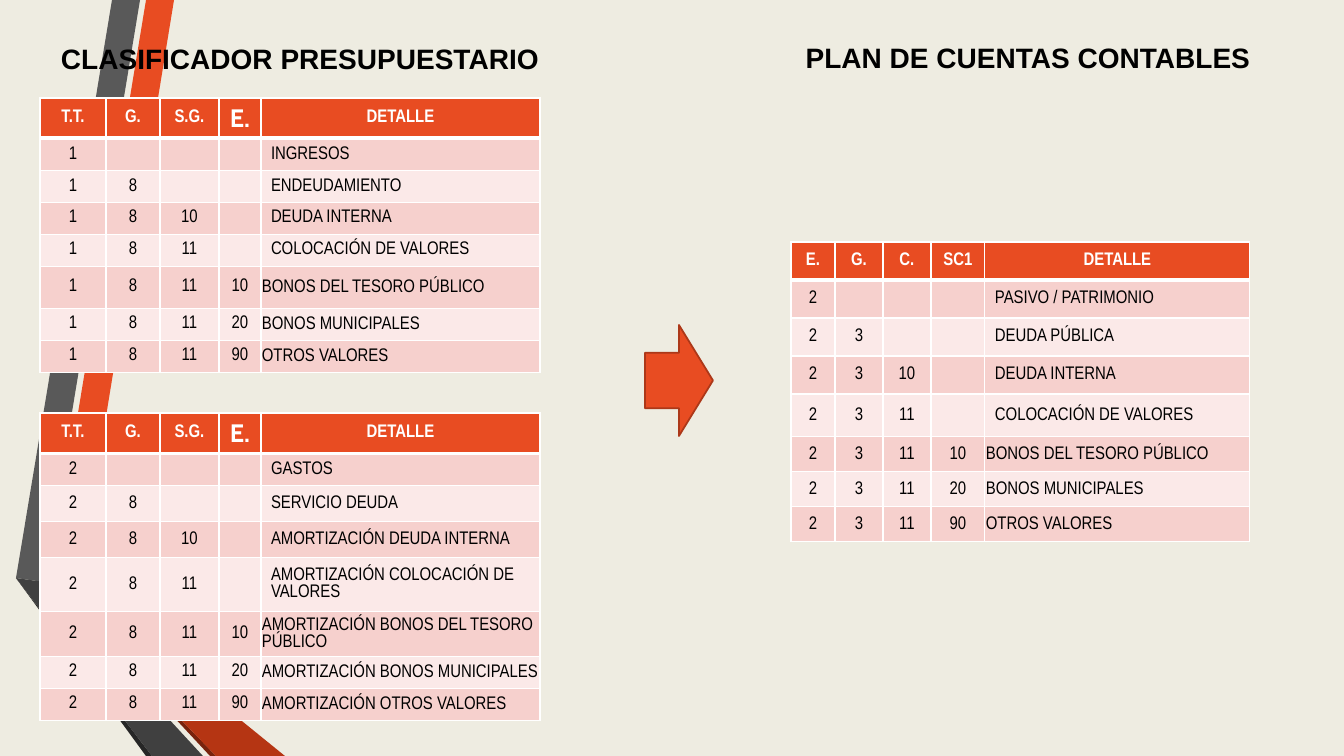
import pptx
import pptx.util
import pptx.dml.color
import pptx.enum.shapes
import pptx.enum.text
import pptx.oxml.ns
import lxml.etree

EMU_PER_PX = 914400 / 100.8
COLORS = {
    "background": "EEECE1", "orange": "E84C22", "outline": "AC3819",
    "gray": "595959", "charcoal": "404040", "soot": "262626",
    "rust": "B53513", "maroon": "78230D",
    "odd row": "F6D0CD", "even row": "FBE9E8",
    "white": "FFFFFF", "black": "000000",
}
CENTER = pptx.enum.text.PP_ALIGN.CENTER
LEFT = pptx.enum.text.PP_ALIGN.LEFT

# Decorative ribbon: color and corner points in px
RIBBON = [
    ("orange", [(50, 583), (78, 588), (174, 0), (146, 0)]),
    ("gray", [(140, 0), (112, 0), (16, 578), (44, 582)]),
    ("soot", [(16, 578), (146, 756), (152, 756)]),
    ("maroon", [(50, 584), (210, 756), (216, 756)]),
    ("rust", [(50, 584), (216, 756), (285, 756), (78, 588), (50, 583)]),
    ("charcoal", [(203, 756), (48, 588), (43, 583), (44, 582), (16, 578), (152, 756)]),
]

# Each row: account codes, then the detail
INCOME_ROWS = [
    ("T.T. G. S.G. E.", "DETALLE"),
    ("1", "INGRESOS"),
    ("1 8", "ENDEUDAMIENTO"),
    ("1 8 10", "DEUDA INTERNA"),
    ("1 8 11", "COLOCACIÓN DE VALORES"),
    ("1 8 11 10", "BONOS DEL TESORO PÚBLICO"),
    ("1 8 11 20", "BONOS MUNICIPALES"),
    ("1 8 11 90", "OTROS VALORES"),
]
EXPENSE_ROWS = [
    ("T.T. G. S.G. E.", "DETALLE"),
    ("2", "GASTOS"),
    ("2 8", "SERVICIO DEUDA"),
    ("2 8 10", "AMORTIZACIÓN DEUDA INTERNA"),
    ("2 8 11", "AMORTIZACIÓN COLOCACIÓN DE VALORES"),
    ("2 8 11 10", "AMORTIZACIÓN BONOS DEL TESORO PÚBLICO"),
    ("2 8 11 20", "AMORTIZACIÓN BONOS MUNICIPALES"),
    ("2 8 11 90", "AMORTIZACIÓN OTROS VALORES"),
]
ACCOUNT_ROWS = [
    ("E. G. C. SC1", "DETALLE"),
    ("2", "PASIVO / PATRIMONIO"),
    ("2 3", "DEUDA PÚBLICA"),
    ("2 3 10", "DEUDA INTERNA"),
    ("2 3 11", "COLOCACIÓN DE VALORES"),
    ("2 3 11 10", "BONOS DEL TESORO PÚBLICO"),
    ("2 3 11 20", "BONOS MUNICIPALES"),
    ("2 3 11 90", "OTROS VALORES"),
]


def px(length):
    return pptx.util.Emu(round(length * EMU_PER_PX))


def rgb(name):
    return pptx.dml.color.RGBColor.from_string(COLORS[name])


def paint(fill, color):
    fill.solid()
    fill.fore_color.rgb = rgb(color)


def add_run(paragraph, text, font_name, size, color, bold, alignment):
    paragraph.alignment = alignment
    run = paragraph.add_run()
    run.text = text
    run.font.name = font_name
    run.font.size = pptx.util.Pt(size)
    run.font.bold = bold
    run.font.color.rgb = rgb(color)


def add_ribbon(slide):
    group = slide.shapes.add_group_shape()
    for color, points in RIBBON:
        builder = group.shapes.build_freeform(*points[0], scale=EMU_PER_PX)
        builder.add_line_segments(points[1:], close=True)
        shape = builder.convert_to_shape()
        shape.shadow.inherit = False
        paint(shape.fill, color)
        shape.line.fill.background()


def write_heading(shape, left, width, text):
    shape.left, shape.top, shape.width, shape.height = px(left), px(36), px(width), px(44)
    frame = shape.text_frame
    frame.word_wrap = True
    frame.auto_size = pptx.enum.text.MSO_AUTO_SIZE.SHAPE_TO_FIT_TEXT
    frame.vertical_anchor = pptx.enum.text.MSO_ANCHOR.TOP
    add_run(frame.paragraphs[0], text, "Arial", 20, "black", True, CENTER)


def add_borders(cell, top, bottom):
    properties = cell._tc.get_or_add_tcPr()
    for side, points in (("L", 1), ("R", 1), ("T", top), ("B", bottom)):
        line = lxml.etree.SubElement(properties, pptx.oxml.ns.qn(f"a:ln{side}"),
                                     w=str(pptx.util.Pt(points)))
        fill = lxml.etree.SubElement(line, pptx.oxml.ns.qn("a:solidFill"))
        lxml.etree.SubElement(fill, pptx.oxml.ns.qn("a:srgbClr"), val=COLORS["white"])


def fill_cell(cell, text, row, is_detail, has_full_code):
    is_header = row == 0
    add_borders(cell, 3 if row == 1 else 1, 3 if is_header else 1)
    paint(cell.fill, "orange" if is_header else "odd row" if row % 2 else "even row")
    cell.vertical_anchor = pptx.enum.text.MSO_ANCHOR.MIDDLE
    paragraph = cell.text_frame.paragraphs[0]
    if not text:
        # Keeps the empty cell from stretching its row
        lxml.etree.SubElement(paragraph._p, pptx.oxml.ns.qn("a:endParaRPr"), sz="1300")
        return
    if is_detail and has_full_code and not is_header:
        cell.margin_left = cell.margin_right = cell.margin_top = px(1)
        cell.margin_bottom = 0
    is_large = is_header and text == "E." and row == 0 and cell.is_large_code \
        if hasattr(cell, "is_large_code") else False
    add_run(paragraph, text, "Cabin" if is_large else "Arial Narrow", 18 if is_large else 13,
            "white" if is_header else "black", is_header,
            LEFT if is_detail and not is_header else CENTER)


def add_code_table(slide, left, top, widths, heights, rows):
    frame = slide.shapes.add_table(len(rows), len(widths), px(left), px(top),
                                   px(sum(widths)), px(sum(heights)))
    table = frame.table
    for column, width in zip(table.columns, widths):
        column.width = px(width)
    for table_row, height in zip(table.rows, heights):
        table_row.height = px(height)
    last = len(widths) - 1
    for row, (code, detail) in enumerate(rows):
        codes = code.split()
        texts = codes + [""] * (last - len(codes)) + [detail]
        for column, text in enumerate(texts):
            fill_cell(table.cell(row, column), text, row, column == last, len(codes) == last)
    return table


def enlarge_element_header(table):
    font = table.cell(0, 3).text_frame.paragraphs[0].runs[0].font
    font.name = "Cabin"
    font.size = pptx.util.Pt(18)


def add_arrow(slide):
    arrow = slide.shapes.add_shape(pptx.enum.shapes.MSO_SHAPE.RIGHT_ARROW,
                                   px(645), px(325), px(68), px(111))
    arrow.shadow.inherit = False
    paint(arrow.fill, "orange")
    arrow.line.color.rgb = rgb("outline")
    arrow.line.width = pptx.util.Pt(1.25)


def main():
    presentation = pptx.Presentation()
    presentation.slide_width, presentation.slide_height = px(1344), px(756)
    slide = presentation.slides.add_slide(presentation.slide_layouts[5])
    paint(slide.background.fill, "background")
    add_ribbon(slide)

    # Headings, with the title raised above the ribbon
    title = slide.shapes.title
    title.element.getparent().append(title.element)
    write_heading(title, 46, 508, "CLASIFICADOR PRESUPUESTARIO")
    accounts_heading = slide.shapes.add_textbox(0, 0, 0, 0)
    write_heading(accounts_heading, 791, 474, "PLAN DE CUENTAS CONTABLES")

    # Budget classifier on the left, chart of accounts on the right
    budget_widths = [66, 54, 59, 42, 279]
    income = add_code_table(slide, 40, 98, budget_widths,
                            [40, 32, 32, 32, 31, 42, 32, 32], INCOME_ROWS)
    expense = add_code_table(slide, 40, 413, budget_widths,
                             [40, 32, 36, 36, 54, 45, 32, 32], EXPENSE_ROWS)
    for table in (income, expense):
        enlarge_element_header(table)
    add_code_table(slide, 791, 242, [44, 48, 48, 54, 265],
                   [38, 38, 38, 38, 43, 35, 35, 35], ACCOUNT_ROWS)
    add_arrow(slide)
    presentation.save("out.pptx")


if __name__ == "__main__":
    main()
